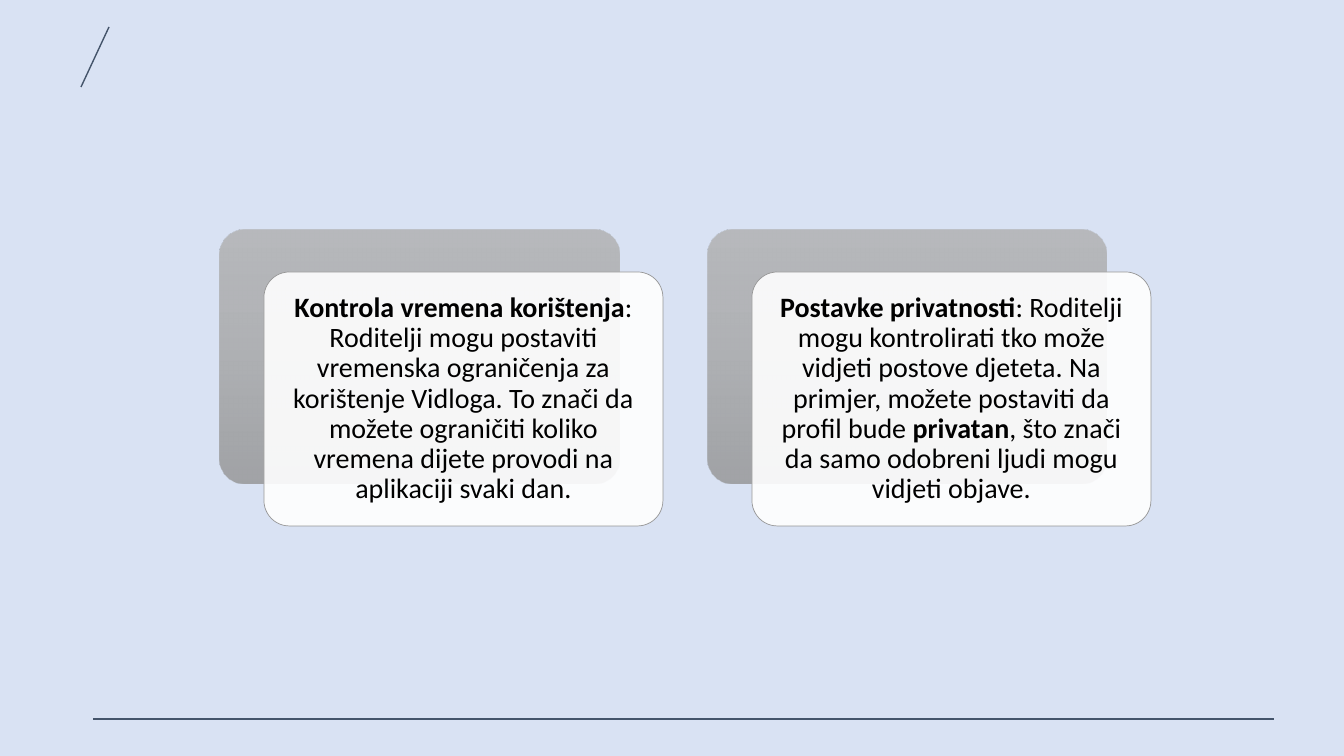
"""Build a slide with two overlapping cards on parental controls."""
from lxml import etree
from pptx import Presentation
from pptx.dml.color import RGBColor
from pptx.enum.shapes import MSO_CONNECTOR, MSO_SHAPE
from pptx.enum.text import MSO_ANCHOR, PP_ALIGN
from pptx.oxml.ns import qn
from pptx.util import Pt

RECT, ROUNDED = MSO_SHAPE.RECTANGLE, MSO_SHAPE.ROUNDED_RECTANGLE
STRAIGHT = MSO_CONNECTOR.STRAIGHT
CENTER, MIDDLE = PP_ALIGN.CENTER, MSO_ANCHOR.MIDDLE

CARDS = [
    [("Kontrola vremena korištenja", True),
     (": Roditelji mogu postaviti vremenska ograničenja za korištenje Vidloga. "
      "To znači da možete ograničiti koliko vremena dijete provodi na aplikaciji svaki dan.", False)],
    [("Postavke privatnosti", True),
     (": Roditelji mogu kontrolirati tko može vidjeti postove djeteta. "
      "Na primjer, možete postaviti da profil bude ", False),
     ("privatan", True),
     (", što znači da samo odobreni ljudi mogu vidjeti objave.", False)],
]
LINES = [(109, 27, 81, 87), (1274, 719, 93, 719)]
GRADIENT = [(0, "AFAFAF"), (50, "A5A5A5"), (100, "939393")]
SLIDE_W, SLIDE_H = 1344, 756
CARD_X, CARD_Y, CARD_W, CARD_H = 220, 230, 399, 254
CARD_STEP, SHIFT_X, SHIFT_Y, INSET = 488, 44, 42, 8


def px(n):
    return round(n * 914400 / 100.8)


def rgb(value):
    return RGBColor.from_string(value)


def add_alpha(color, percent):
    etree.SubElement(color, qn("a:alpha"), val=str(percent * 1000))


def add_box(shapes, kind, x, y, w, h):
    sp = shapes.add_shape(kind, px(x), px(y), px(w), px(h))
    sp.shadow.inherit = False
    sp.line.fill.background()
    if kind == ROUNDED:
        sp.adjustments[0] = 0.1
    return sp


def fill_solid(sp, color, alpha):
    sp.fill.solid()
    sp.fill.fore_color.rgb = rgb(color)
    add_alpha(sp._element.spPr.find(qn("a:solidFill")).find(qn("a:srgbClr")), alpha)


def fill_gradient(sp, stops, alpha):
    sp.fill.gradient()
    sp.fill.gradient_angle = 270
    gs_list = sp._element.spPr.find(".//" + qn("a:gsLst"))
    for old in list(gs_list):
        gs_list.remove(old)
    for position, color in stops:
        stop = etree.SubElement(gs_list, qn("a:gs"), pos=str(position * 1000))
        add_alpha(etree.SubElement(stop, qn("a:srgbClr"), val=color), alpha)


def add_line(shapes, x1, y1, x2, y2):
    line = shapes.add_connector(STRAIGHT, px(x1), px(y1), px(x2), px(y2))
    line.line.color.rgb = rgb("44546A")
    line.line.width = Pt(1)
    etree.SubElement(line._element.spPr, qn("a:effectLst"))


def write_text(sp, runs):
    tf = sp.text_frame
    tf.word_wrap = True
    tf.vertical_anchor = MIDDLE
    tf.margin_left = tf.margin_right = tf.margin_top = tf.margin_bottom = px(INSET)
    p = tf.paragraphs[0]
    p.alignment = CENTER
    p.line_spacing = 0.9
    p.font.name = "Calibri"
    p.font.size = Pt(20)
    p.font.color.rgb = rgb("000000")
    for text, bold in runs:
        r = p.add_run()
        r.text = text
        r.font.bold = bold


def add_card(shapes, x, y, runs):
    fill_gradient(add_box(shapes, ROUNDED, x, y, CARD_W, CARD_H), GRADIENT, 80)
    front = add_box(shapes, ROUNDED, x + SHIFT_X, y + SHIFT_Y, CARD_W, CARD_H)
    fill_solid(front, "FFFFFF", 90)
    front.line.color.rgb = rgb("969696")
    front.line.width = Pt(0.5)
    write_text(front, runs)


def main():
    prs = Presentation()
    prs.slide_width, prs.slide_height = px(SLIDE_W), px(SLIDE_H)
    s = prs.slides.add_slide(prs.slide_layouts[6])
    fill_solid(add_box(s.shapes, RECT, 0, 0, SLIDE_W, SLIDE_H), "4472C4", 20)
    for ends in LINES:
        add_line(s.shapes, *ends)
    for i, runs in enumerate(CARDS):
        add_card(s.shapes, CARD_X + i * CARD_STEP, CARD_Y, runs)
    prs.save("out.pptx")


if __name__ == "__main__":
    main()
